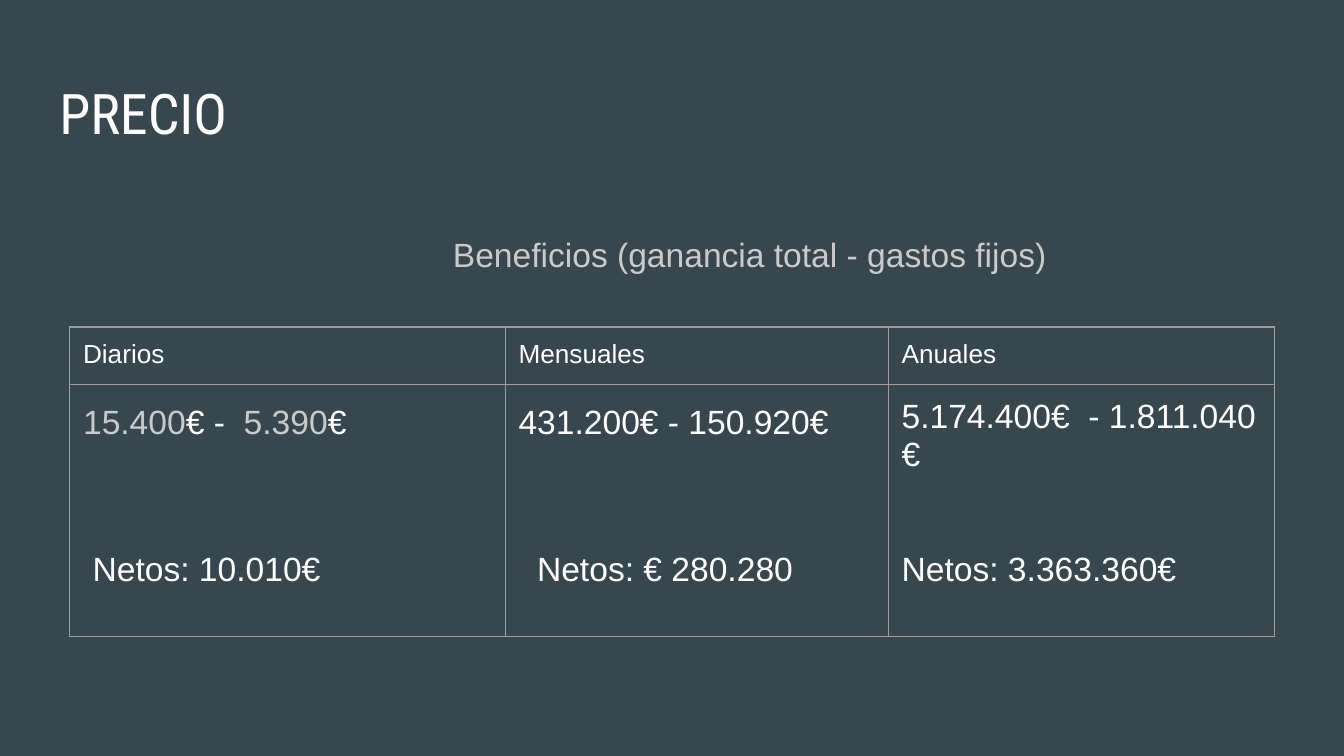
"""Builds the PRECIO slide: a title, a subtitle and a table of profits."""
from lxml.etree import SubElement
from pptx import Presentation
from pptx.dml.color import RGBColor
from pptx.enum.text import MSO_ANCHOR, MSO_AUTO_SIZE, PP_ALIGN
from pptx.oxml import parse_xml
from pptx.oxml.ns import nsdecls, qn
from pptx.util import Cm, Pt

COLORS = {"background": "37474F", "white": "FFFFFF", "soft": "CACACA", "border": "9E9E9E"}
TITLE = "PRECIO"
SUBTITLE = "Beneficios (ganancia total - gastos fijos)"
PERIODS = [
    {
        "name": "Diarios", "width": 8.23, "line": 1.15, "gap": 55.8, "indent": 0.18,
        "amounts": [("15.400", "soft"), ("€ -  ", "white"), ("5.390", "soft"), ("€", "white")],
        "net": "Netos: 10.010€",
    },
    {
        "name": "Mensuales", "width": 7.24, "line": 1.15, "gap": 55.8, "indent": 0.35,
        "amounts": [("431.200€ - 150.920€", "white")],
        "net": "Netos: € 280.280",
    },
    {
        "name": "Anuales", "width": 7.29, "line": 1, "gap": 41.4, "indent": 0,
        "amounts": [("5.174.400€  - 1.811.040 €", "white")],
        "net": "Netos: 3.363.360€",
    },
]
ROW_HEIGHTS = [1.06, 4.76]
INSET = Cm(0.25)


def rgb(name):
    return RGBColor.from_string(COLORS[name])


def set_insets(holder):
    holder.margin_left = holder.margin_right = INSET
    holder.margin_top = holder.margin_bottom = INSET


def write(paragraph, runs, size, font="Arial", line=1, before=0, after=0, indent=0):
    paragraph.alignment = PP_ALIGN.LEFT
    paragraph.line_spacing = line
    paragraph.space_before = Pt(before)
    paragraph.space_after = Pt(after)
    properties = paragraph._p.get_or_add_pPr()
    properties.set("marL", str(Cm(indent)))
    properties.set("indent", "0")
    for text, color in runs:
        run = paragraph.add_run()
        run.text = text
        run.font.name = font
        run.font.size = Pt(size)
        run.font.bold = False
        run.font.color.rgb = rgb(color)


def add_borders(cell):
    properties = cell._tc.get_or_add_tcPr()
    for position, side in enumerate(("lnL", "lnR", "lnT", "lnB")):
        border = parse_xml(f'<a:{side} {nsdecls("a")} w="{Pt(0.75)}"/>')
        fill = SubElement(border, qn("a:solidFill"))
        SubElement(fill, qn("a:srgbClr"), val=COLORS["border"])
        properties.insert(position, border)


def add_title(slide):
    title = slide.shapes.title
    title.left, title.top, title.width, title.height = Cm(0.87), Cm(1.24), Cm(23.67), Cm(1.6)
    frame = title.text_frame
    set_insets(frame)
    frame.auto_size = MSO_AUTO_SIZE.NONE
    frame.vertical_anchor = MSO_ANCHOR.TOP
    write(frame.paragraphs[0], [(TITLE, "white")], 30, font="Roboto Condensed")


def add_subtitle(slide):
    frame = slide.shapes.add_textbox(Cm(1.07), Cm(4.06), Cm(23.24), Cm(8.56)).text_frame
    set_insets(frame)
    frame.word_wrap = True
    write(frame.paragraphs[0], [(SUBTITLE, "soft")], 18, line=1.15, after=16, indent=7.24)


def add_profits(slide):
    width = sum(period["width"] for period in PERIODS)
    table = slide.shapes.add_table(
        len(ROW_HEIGHTS), len(PERIODS), Cm(1.32), Cm(6.18), Cm(width), Cm(sum(ROW_HEIGHTS))
    ).table
    table.first_row = table.horz_banding = False
    for row, height in zip(table.rows, ROW_HEIGHTS):
        row.height = Cm(height)
    for column, period in enumerate(PERIODS):
        table.columns[column].width = Cm(period["width"])
        header, body = table.cell(0, column), table.cell(1, column)
        for cell in (header, body):
            set_insets(cell)
            cell.vertical_anchor = MSO_ANCHOR.TOP
            cell.fill.background()
            add_borders(cell)
        write(header.text_frame.paragraphs[0], [(period["name"], "white")], 14)
        write(body.text_frame.paragraphs[0], period["amounts"], 18, line=period["line"])
        write(body.text_frame.add_paragraph(), [(period["net"], "white")], 18,
              line=period["line"], before=period["gap"], indent=period["indent"])


def main():
    deck = Presentation()
    deck.slide_width, deck.slide_height = Cm(25.4), Cm(14.29)
    slide = deck.slides.add_slide(deck.slide_layouts[5])
    slide.background.fill.solid()
    slide.background.fill.fore_color.rgb = rgb("background")
    add_title(slide)
    add_subtitle(slide)
    add_profits(slide)
    deck.save("out.pptx")


if __name__ == "__main__":
    main()
